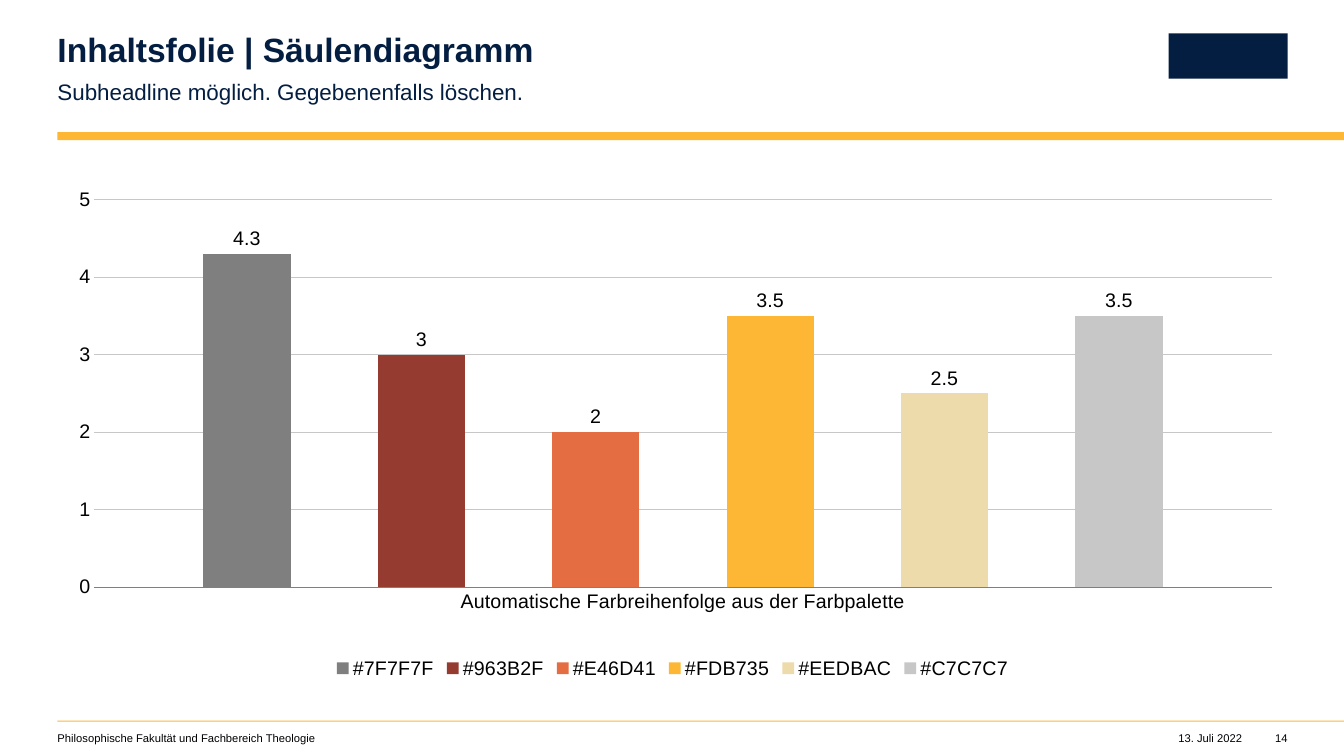
from lxml import etree
from pptx import Presentation
from pptx.chart.data import CategoryChartData
from pptx.dml.color import RGBColor
from pptx.enum.chart import XL_CHART_TYPE, XL_LABEL_POSITION, XL_LEGEND_POSITION, XL_TICK_MARK
from pptx.enum.shapes import MSO_SHAPE
from pptx.enum.text import PP_ALIGN
from pptx.oxml.ns import qn
from pptx.util import Emu, Pt

COLUMNS = XL_CHART_TYPE.COLUMN_CLUSTERED
OUTSIDE_END = XL_LABEL_POSITION.OUTSIDE_END
BOTTOM = XL_LEGEND_POSITION.BOTTOM
NO_TICK = XL_TICK_MARK.NONE
RECT = MSO_SHAPE.RECTANGLE
LEFT, RIGHT = PP_ALIGN.LEFT, PP_ALIGN.RIGHT

BLACK = RGBColor(0x00, 0x00, 0x00)
NAVY = RGBColor(0x04, 0x1E, 0x42)
GRAY = RGBColor(0x7F, 0x7F, 0x7F)
MAROON = RGBColor(0x96, 0x3B, 0x2F)
ORANGE = RGBColor(0xE4, 0x6D, 0x41)
YELLOW = RGBColor(0xFD, 0xB7, 0x35)
SAND = RGBColor(0xEE, 0xDB, 0xAC)
SILVER = RGBColor(0xC7, 0xC7, 0xC7)

FONT = "Arial"
PX = 9144  # 100 px to the inch
WIDTH, HEIGHT = 1333, 750
MARGIN = 57

CATEGORY = "Automatische Farbreihenfolge aus der Farbpalette"
COLUMN_VALUES = [(GRAY, 4.3), (MAROON, 3), (ORANGE, 2),
                 (YELLOW, 3.5), (SAND, 2.5), (SILVER, 3.5)]
PLOT_BOX = {"x": 0.03, "y": 0.04, "w": 0.957, "h": 0.769}


def px(*lengths):
    return [Emu(length * PX) for length in lengths]


class SlideBuilder:
    def __init__(self, prs):
        self.slide = prs.slides.add_slide(prs.slide_layouts[6])

    def bar(self, x, y, w, h, color):
        s = self.slide.shapes.add_shape(RECT, *px(x, y, w, h))
        s.shadow.inherit = False
        s.fill.solid()
        s.fill.fore_color.rgb = color
        s.line.fill.background()

    def style_font(self, font, size, color=BLACK, bold=False):
        font.name = FONT
        font.size = Pt(size)
        font.bold = bold
        font.color.rgb = color

    def text(self, x, y, w, h, text, size, color=BLACK, bold=False,
             align=LEFT, spacing=1.0):
        tf = self.slide.shapes.add_textbox(*px(x, y, w, h)).text_frame
        tf.margin_left = tf.margin_right = tf.margin_top = tf.margin_bottom = 0
        tf.word_wrap = True
        tf.text = text
        p = tf.paragraphs[0]
        p.alignment = align
        p.line_spacing = spacing
        self.style_font(p.runs[0].font, size, color, bold)

    def column_chart(self, x, y, w, h, category, columns):
        """Draw one column per series, each named after its colour."""
        data = CategoryChartData(number_format="General")
        data.categories = [category]
        for color, value in columns:
            data.add_series(f"#{color}", [value])
        chart = self.slide.shapes.add_chart(COLUMNS, *px(x, y, w, h), data).chart
        self.style_font(chart.font, 14)
        chart.has_title = False
        chart.has_legend = True
        chart.legend.position = BOTTOM
        chart.legend.include_in_layout = False
        self.style_font(chart.legend.font, 14)

        plot = chart.plots[0]
        plot.gap_width = 250
        plot.overlap = -100
        plot.vary_by_categories = False
        for series, (color, _) in zip(plot.series, columns):
            series.format.fill.solid()
            series.format.fill.fore_color.rgb = color
            labels = series.data_labels
            labels.show_value = True
            labels.position = OUTSIDE_END
            self.style_font(labels.font, 14)
        self.style_axes(chart)
        self.place_plot(chart)

    def style_axes(self, chart):
        for axis in (chart.category_axis, chart.value_axis):
            axis.major_tick_mark = axis.minor_tick_mark = NO_TICK
            self.style_font(axis.tick_labels.font, 14)
        values = chart.value_axis
        values.minimum_scale, values.maximum_scale, values.major_unit = 0, 5, 1
        values.format.line.fill.background()
        values.has_major_gridlines = True
        for line, color in ((chart.category_axis.format.line, GRAY),
                            (values.major_gridlines.format.line, SILVER)):
            line.color.rgb = color
            line.width = Pt(0.5)

    def place_plot(self, chart):
        """Fix the inner plot area as fractions of the chart."""
        area = chart.plots[0]._element.getparent()
        for old in area.findall(qn("c:layout")):
            area.remove(old)
        layout = etree.Element(qn("c:layout"))
        manual = etree.SubElement(layout, qn("c:manualLayout"))
        settings = [("layoutTarget", "inner"), ("xMode", "edge"), ("yMode", "edge")]
        for tag, value in settings + list(PLOT_BOX.items()):
            etree.SubElement(manual, qn(f"c:{tag}")).set("val", str(value))
        area.insert(0, layout)


def main():
    prs = Presentation()
    prs.slide_width, prs.slide_height = px(WIDTH, HEIGHT)
    b = SlideBuilder(prs)
    for y, h in ((131, 8), (715, 1)):
        b.bar(MARGIN, y, WIDTH - MARGIN, h, YELLOW)
    b.bar(1159, 33, 118, 45, NAVY)

    b.text(MARGIN, 33, 749, 36, "Inhaltsfolie | Säulendiagramm", 24, NAVY,
           bold=True, spacing=0.9)
    b.text(MARGIN, 75, 749, 27, "Subheadline möglich. Gegebenenfalls löschen.",
           16, NAVY, spacing=1.1)
    b.column_chart(MARGIN, 178, 1220, 500, CATEGORY, COLUMN_VALUES)

    for x, w, text, align in (
            (MARGIN, 598, "Philosophische Fakultät und Fachbereich Theologie", LEFT),
            (1139, 93, "13. Juli 2022", RIGHT),
            (1256, 21, "14", RIGHT)):
        b.text(x, 726, w, 13, text, 8, align=align)
    prs.save("out.pptx")


if __name__ == "__main__":
    main()
